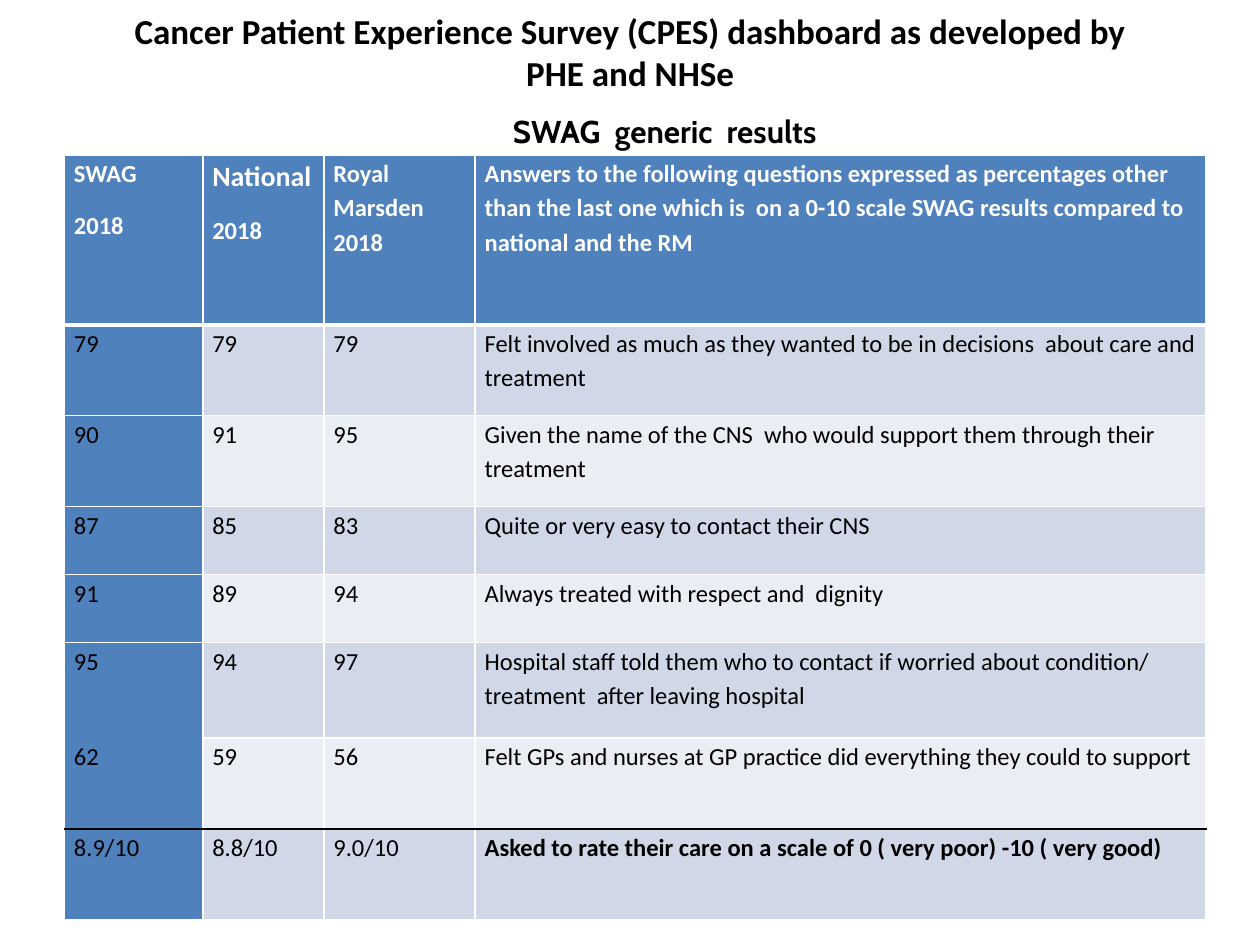
"""Build the patient experience survey dashboard slide."""
import lxml.etree
import pptx
import pptx.dml.color
import pptx.enum.text
import pptx.oxml.ns
import pptx.util

Cm = pptx.util.Cm
Pt = pptx.util.Pt

TITLE = "Cancer Patient Experience Survey (CPES) dashboard as developed by PHE and NHSe"
SUBTITLE = "SWAG  generic  results"
HEADER = (
    "SWAG\n2018",
    "National\n2018",
    "Royal Marsden 2018",
    "Answers to the following questions expressed as percentages other than the last one "
    "which is  on a 0-10 scale SWAG results compared to national and the RM",
)
RESULTS = [
    ("79", "79", "79", "Felt involved as much as they wanted to be in decisions  about care and treatment"),
    ("90", "91", "95", "Given the name of the CNS  who would support them through their treatment"),
    ("87", "85", "83", "Quite or very easy to contact their CNS"),
    ("91", "89", "94", "Always treated with respect and  dignity"),
    ("95", "94", "97", "Hospital staff told them who to contact if worried about condition/ treatment  after leaving hospital"),
    ("62", "59", "56", "Felt GPs and nurses at GP practice did everything they could to support"),
    ("8.9/10", "8.8/10", "9.0/10", "Asked to rate their care on a scale of 0 ( very poor) -10 ( very good)"),
]
ROWS = [HEADER] + RESULTS
LAST = len(ROWS) - 1

THEME = {
    "font": "Calibri", "subtitle_font": "Cabin",
    "title_size": 20, "subtitle_size": 18, "table_size": 14, "large_size": 16,
    "black": "000000", "white": "FFFFFF", "blue": "4F81BD",
    "bands": ("E9EDF4", "D0D8E8"),
}
TITLE_BOX = (1.91, 0.33, 21.59, 1.4)
SUBTITLE_BOX = (1.3, 2.13, 24.2, 13.49)
TABLE_BOX = (1.3, 3.12, 23.01, 15.42)
COLUMN_WIDTHS = (2.79, 2.44, 3.05, 14.73)
ROW_HEIGHTS = (3.43, 1.83, 1.83, 1.37, 1.37, 1.93, 1.83, 1.83)


def style_font(font, name, size, color, bold):
    font.name, font.size, font.bold = name, Pt(size), bold
    font.color.rgb = pptx.dml.color.RGBColor.from_string(color)


def fill_placeholder(shape, text, box, font_name, size, anchor):
    shape.left, shape.top, shape.width, shape.height = map(Cm, box)
    frame = shape.text_frame
    frame.text = text
    frame.word_wrap = True
    frame.auto_size = pptx.enum.text.MSO_AUTO_SIZE.NONE
    frame.vertical_anchor = anchor
    paragraph = frame.paragraphs[0]
    paragraph.alignment = pptx.enum.text.PP_ALIGN.CENTER
    paragraph.space_before = Pt(0)
    style_font(paragraph.font, font_name, size, THEME["black"], True)


def horizontal_border(line, column):
    """Return colour and width of the border above row number line."""
    if line == 1:
        return THEME["white"], 3
    if line == LAST:
        return THEME["black"], 1
    if line == LAST - 1 and column == 0:
        return None, 1
    return THEME["white"], 1


def add_border(cell, side, color, width):
    qn = pptx.oxml.ns.qn
    properties = cell._tc.get_or_add_tcPr()
    line = lxml.etree.SubElement(properties, qn(f"a:ln{side}"), w=str(Pt(width)))
    if color is None:
        lxml.etree.SubElement(line, qn("a:noFill"))
    else:
        fill = lxml.etree.SubElement(line, qn("a:solidFill"))
        lxml.etree.SubElement(fill, qn("a:srgbClr"), val=color)


def fill_cell(cell, text, row, column):
    cell.margin_left = cell.margin_right = Cm(0.19)
    cell.margin_top = cell.margin_bottom = 0
    for side in "LR":
        add_border(cell, side, THEME["white"], 1)
    add_border(cell, "T", *horizontal_border(row, column))
    add_border(cell, "B", *horizontal_border(row + 1, column))
    is_blue = row == 0 or column == 0
    background = THEME["blue"] if is_blue else THEME["bands"][row % 2]
    cell.fill.solid()
    cell.fill.fore_color.rgb = pptx.dml.color.RGBColor.from_string(background)
    cell.text = text
    bold = row == 0 or (row == LAST and column == 3)
    color = THEME["white"] if row == 0 else THEME["black"]
    for paragraph in cell.text_frame.paragraphs:
        paragraph.line_spacing = 1.15
        paragraph.space_after = Pt(10)
        size = THEME["large_size" if paragraph.text == "National" else "table_size"]
        style_font(paragraph.font, THEME["font"], size, color, bold)


def add_results_table(slide):
    table = slide.shapes.add_table(len(ROWS), len(HEADER), *map(Cm, TABLE_BOX)).table
    table.horz_banding = False
    for column, width in zip(table.columns, COLUMN_WIDTHS):
        column.width = Cm(width)
    for row, height in zip(table.rows, ROW_HEIGHTS):
        row.height = Cm(height)
    for row, texts in enumerate(ROWS):
        for column, text in enumerate(texts):
            fill_cell(table.cell(row, column), text, row, column)


def main():
    presentation = pptx.Presentation()
    presentation.slide_width, presentation.slide_height = Cm(25.4), Cm(19.05)
    slide = presentation.slides.add_slide(presentation.slide_layouts[0])
    anchors = pptx.enum.text.MSO_ANCHOR
    fill_placeholder(slide.shapes.title, TITLE, TITLE_BOX,
                     THEME["font"], THEME["title_size"], anchors.MIDDLE)
    fill_placeholder(slide.placeholders[1], SUBTITLE, SUBTITLE_BOX,
                     THEME["subtitle_font"], THEME["subtitle_size"], anchors.TOP)
    add_results_table(slide)
    presentation.save("out.pptx")


if __name__ == "__main__":
    main()
